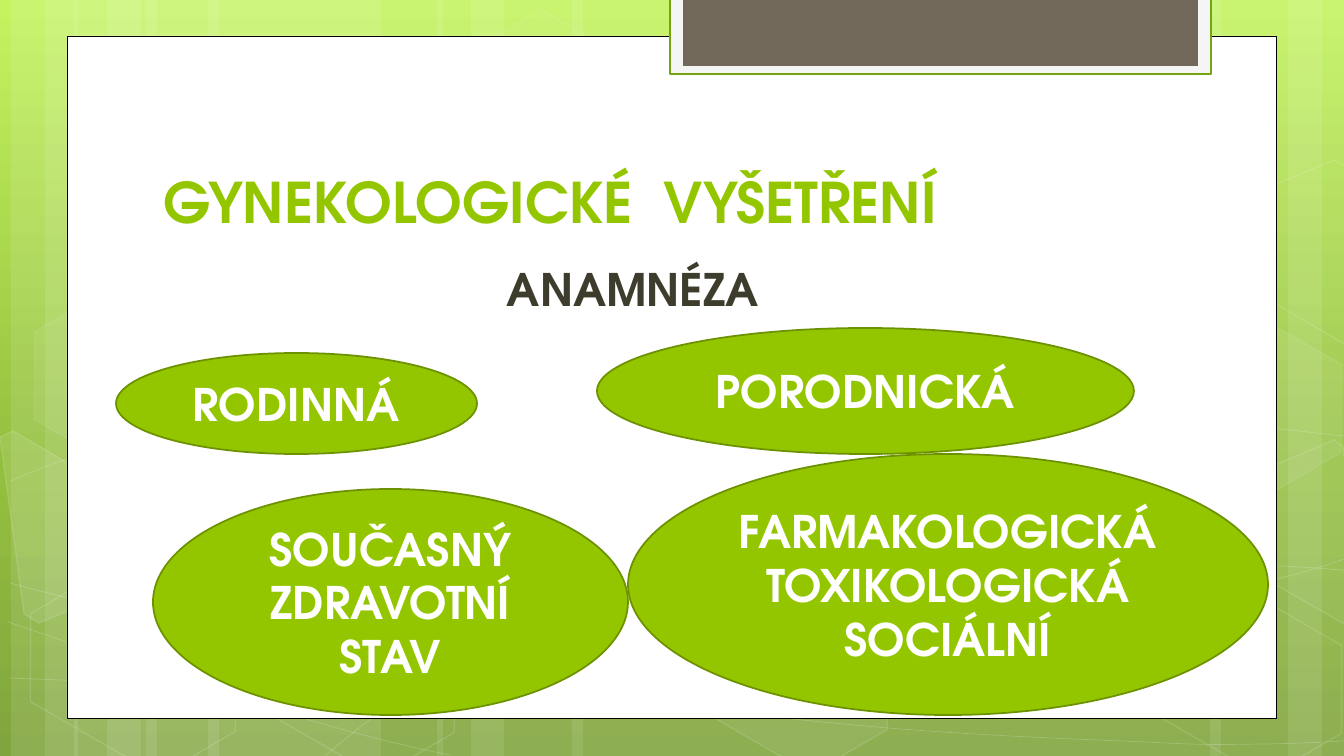
from copy import deepcopy
from dataclasses import dataclass

from pptx import Presentation
from pptx.dml.color import RGBColor as RGB
from pptx.enum.shapes import MSO_SHAPE as SHAPE
from pptx.enum.text import MSO_ANCHOR as ANCHOR, PP_ALIGN as ALIGN
from pptx.oxml.ns import qn
from pptx.util import Pt
from lxml.etree import SubElement


@dataclass(frozen=True)
class Theme:
    """Colours, font and type sizes of the slide."""
    font: str = "TeX Gyre Adventor"
    white: str = "FFFFFF"
    black: str = "000000"
    green: str = "94C600"
    dark_green: str = "6D9200"
    tab_line: str = "74A510"
    tab_pale: str = "F5F5F5"
    tab_brown: str = "71685A"
    ink: str = "3E3D2D"
    sky: tuple = ((0, "C3F35F"), (0.62, "93BF3F"), (1, "81A53E"))
    title: int = 40
    body: int = 32


T = Theme()
PX = 914400 / 100.8
W, H = 1344, 756

STRIPES = [(146, 235), (11, 67), (45, 112), (208, 235), (74, 67), (107, 112),
           (986, 235), (1288, 67), (1210, 112), (572, 414), (437, 67), (471, 112)]
WAVES = [
    [(10, 678), (83, 681), (155, 684), (256, 683), (357, 682), (481, 680), (615, 670),
     (750, 660), (940, 641), (1063, 622), (1187, 603), (1313, 573), (1354, 555)],
    [(10, 481), (48, 465), (87, 450), (163, 434), (240, 419), (348, 397), (467, 390),
     (587, 383), (731, 382), (879, 390), (1027, 398), (1273, 429), (1354, 437)],
    [(8, 622), (170, 677), (333, 733), (450, 755)],
    [(10, 583), (51, 594), (94, 605), (172, 621), (250, 636), (367, 661), (479, 678),
     (591, 696), (733, 714), (844, 724), (956, 735), (1075, 739), (1146, 742),
     (1217, 746), (1235, 744), (1270, 744), (1304, 743), (1330, 742), (1354, 740)],
    [(326, 755), (350, 735), (373, 715), (406, 697), (438, 678), (484, 658), (521, 644),
     (558, 630), (582, 624), (631, 614), (680, 604), (771, 590), (817, 583),
     (865, 576), (872, 576), (914, 574), (956, 571), (1021, 568), (1067, 567),
     (1114, 566), (1191, 566), (1191, 566), (1220, 566), (1250, 566), (1280, 566),
     (1305, 567), (1328, 569), (1340, 570), (1352, 571), (1348, 570), (1352, 571)],
]
HEXAGONS = [(449, 36, 4, 8), (667, 594, 6, 12), (15, 596, 0, 12), (19, 314, 7, 8),
            (234, 597, 0, 12), (1121, 598, 0, 12), (1121, 317, 7, 8)]
SHARDS = [
    ([(0, 437), (13, 431), (116, 491), (128, 586), (39, 623), (24, 614)], 10),
    ([(1245, 478), (1334, 440), (1343, 447), (1368, 630), (1360, 633), (1257, 574)], 4),
    ([(1245, 197), (1334, 160), (1345, 166), (1368, 349), (1360, 353), (1257, 293)], 0),
]
TOPICS = [("RODINNÁ", 49, 317, 361, 101),
          ("SOUČASNÝ ZDRAVOTNÍ STAV", 86, 453, 475, 226),
          ("PORODNICKÁ", 530, 292, 537, 126),
          ("FARMAKOLOGICKÁ\nTOXIKOLOGICKÁ SOCIÁLNÍ", 561, 418, 640, 261)]


def emu(*lengths):
    """Turn px lengths into EMU."""
    return [round(n * PX) for n in lengths]


def fade(s, where, percent):
    """Set the opacity of a solid colour in the shape properties."""
    for clr in s._element.spPr.xpath(where + "/a:srgbClr"):
        SubElement(clr, qn("a:alpha")).set("val", str(percent * 1000))


def paint(s, fill=None, fill_alpha=100, line=None, width=1, line_alpha=100):
    """Set fill and outline, with opacity in percent."""
    s.shadow.inherit = False
    if fill and fill_alpha:
        s.fill.solid()
        s.fill.fore_color.rgb = RGB.from_string(fill)
        if fill_alpha < 100:
            fade(s, "./a:solidFill", fill_alpha)
    else:
        s.fill.background()
    if line:
        s.line.color.rgb = RGB.from_string(line)
        s.line.width = Pt(width)
        if line_alpha < 100:
            fade(s, "./a:ln/a:solidFill", line_alpha)
    else:
        s.line.fill.background()


def add_preset(slide, kind, box, **look):
    """Add a painted preset shape."""
    s = slide.shapes.add_shape(kind, *emu(*box))
    paint(s, **look)
    return s


def add_outline(slide, box, points, close, **look):
    """Add a painted freeform through points given relative to the box."""
    x, y = box[:2]
    pts = [emu(x + px, y + py) for px, py in points]
    builder = slide.shapes.build_freeform(*pts[0])
    builder.add_line_segments(pts[1:], close=close)
    s = builder.convert_to_shape()
    paint(s, **look)
    return s


def bend(s):
    """Turn each three line segments of a freeform into one cubic curve."""
    outline = s._element.spPr.xpath("./a:custGeom/a:pathLst/*")[0]
    lines = outline.findall(qn("a:lnTo"))
    for i in range(0, len(lines), 3):
        curve = SubElement(outline, qn("a:cubicBezTo"))
        for line in lines[i:i + 3]:
            curve.append(line[0])
            outline.remove(line)


def write(tf, text, size, color, align=ALIGN.LEFT, anchor=ANCHOR.TOP, tab=None):
    """Write one bold paragraph, with line breaks and an optional tab stop."""
    tf.word_wrap = True
    tf.vertical_anchor = anchor
    p = tf.paragraphs[0]
    p.alignment = align
    if tab:
        stops = SubElement(p._p.get_or_add_pPr(), qn("a:tabLst"))
        SubElement(stops, qn("a:tab"), pos=str(emu(tab)[0]), algn="l")
    for i, part in enumerate(text.split("\n")):
        if i:
            p.add_line_break()
        r = p.add_run()
        r.text = part
        for name, value in {"name": T.font, "size": Pt(size), "bold": True}.items():
            setattr(r.font, name, value)
        r.font.color.rgb = RGB.from_string(color)


def add_backdrop(slide, box):
    """Draw the gradient, stripes, waves and hexagons."""
    x, y, w, h = box
    fill = slide.background.fill
    fill.gradient()
    fill.gradient_angle = 270
    stops = slide._element.xpath(".//a:gsLst")[0]
    stops.insert(1, deepcopy(stops[0]))
    for stop, (position, color) in zip(fill.gradient_stops, T.sky):
        stop.position = position
        stop.color.rgb = RGB.from_string(color)
    for left, width in STRIPES:
        add_preset(slide, SHAPE.RECTANGLE, (x + left, y, width, h),
                   fill=T.white, fill_alpha=10)
    for knots in WAVES:
        bend(add_outline(slide, box, knots, False,
                         line=T.white, width=0.5, line_alpha=20))
    for left, top, fill_alpha, line_alpha in HEXAGONS:
        s = add_preset(slide, SHAPE.HEXAGON, (x + left, y + top, 236, 153), fill=T.white,
                       fill_alpha=fill_alpha, line=T.white, line_alpha=line_alpha)
        s.rotation = 30
        s.adjustments[0], s.adjustments[1] = 0.285, 1.155
    for points, fill_alpha in SHARDS:
        add_outline(slide, box, points, True, fill=T.white, fill_alpha=fill_alpha,
                    line=T.white, line_alpha=12)


def add_card(slide, box):
    """Draw the white card with the tab hanging from the slide's top edge."""
    x, y, w, h = box
    add_preset(slide, SHAPE.RECTANGLE, box, fill=T.white, line=T.black, width=0.5)
    add_preset(slide, SHAPE.RECTANGLE, (x + 603, y - 38, 541, 76),
               fill=T.tab_pale, line=T.tab_line, width=1.25)
    add_preset(slide, SHAPE.RECTANGLE, (x + 616, y - 38, 515, 68), fill=T.tab_brown)


def add_headings(slide, box):
    """Write the title and the subtitle."""
    x, y, w, h = box
    s = slide.shapes.add_textbox(*emu(x + 87, y + 78, 1032, 126))
    write(s.text_frame, "GYNEKOLOGICKÉ\tVYŠETŘENÍ", T.title, T.green,
          anchor=ANCHOR.BOTTOM, tab=500)
    s = slide.shapes.add_textbox(*emu(x + 86, y + 221, 996, 387))
    s.text_frame.margin_left = emu(354)[0]
    write(s.text_frame, "ANAMNÉZA", T.body, T.ink)


def add_topics(slide, box):
    """Draw the labelled ellipses."""
    x, y, w, h = box
    for text, left, top, width, height in TOPICS:
        s = add_preset(slide, SHAPE.OVAL, (x + left, y + top, width, height),
                       fill=T.green, line=T.dark_green, width=1.25)
        write(s.text_frame, text, T.body, T.white, ALIGN.CENTER, ANCHOR.MIDDLE)


def main():
    """Build and save the slide."""
    prs = Presentation()
    prs.slide_width, prs.slide_height = emu(W, H)
    slide = prs.slides.add_slide(prs.slide_layouts[6])
    card = (67, 36, 1209, 682)
    add_backdrop(slide, (0, 0, W, H))
    for region in (add_card, add_headings, add_topics):
        region(slide, card)
    prs.save("out.pptx")


if __name__ == "__main__":
    main()
